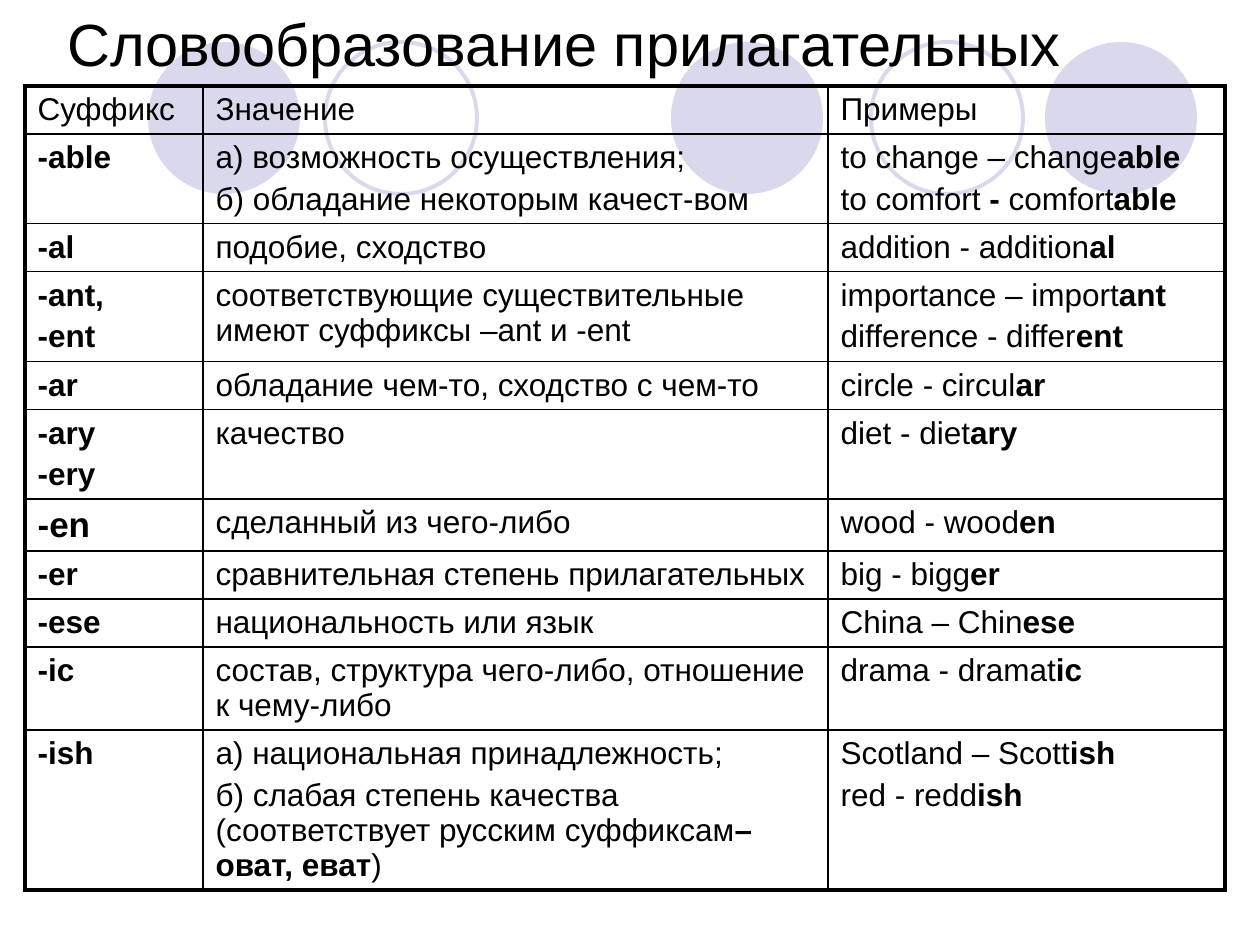
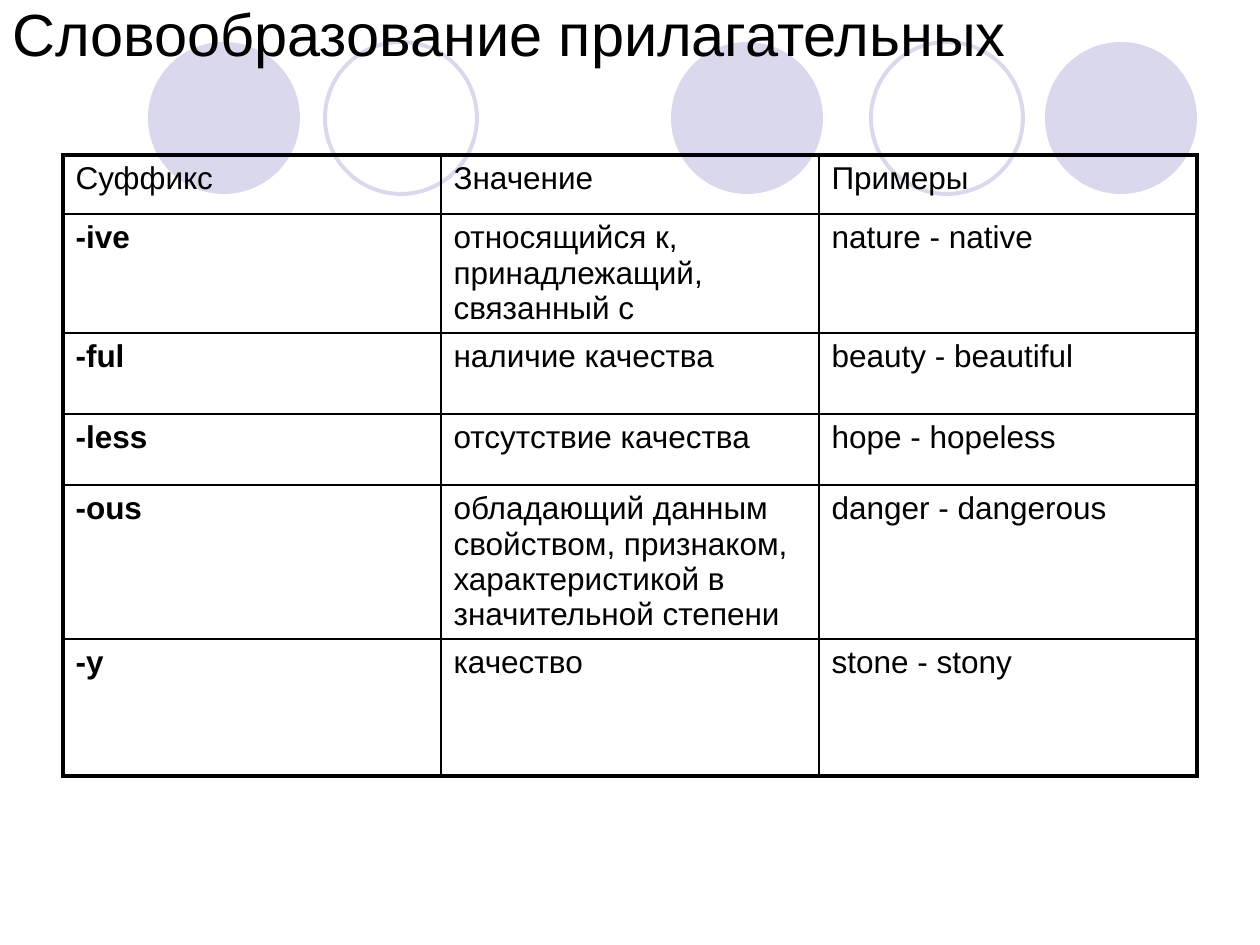
from lxml.etree import SubElement
from pptx import Presentation
from pptx.dml.color import RGBColor
from pptx.enum.shapes import MSO_SHAPE as SHAPE
from pptx.enum.text import MSO_ANCHOR as ANCHOR
from pptx.oxml.ns import qn
from pptx.util import Emu, Pt

COLORS = {"text": "000000", "border": "000000", "circle": "D9D8EC", "page": "FFFFFF"}
FONT = "Arial"
TITLE = "Словообразование прилагательных"
HEADER = ("Суффикс", "Значение", "Примеры")
CIRCLE_SIZE, CIRCLE_TOP = 152, 42
CIRCLES = [(671, True), (1045, True), (148, True), (871, False), (325, False)]  # left, filled
THICK, THIN = Pt(2.25), Pt(1)
LINE_HEIGHT = 1.12  # table line height, in text sizes


def px(length):
    return Emu(round(length * 914400 / 126))


def write_text(frame, text, size=18, space=3.6, line_height=None):
    """Each line is a paragraph; text between asterisks is bold."""
    frame.word_wrap = True
    for index, line in enumerate(text.split("\n")):
        para = frame.add_paragraph() if index else frame.paragraphs[0]
        if line_height:
            para.line_spacing = Pt(size * line_height)
        if index:
            para.space_before = Pt(space)
        for part, words in enumerate(line.split("*")):
            if words:
                span = para.add_run()
                span.text = words
                span.font.name = FONT
                span.font.size = Pt(size)
                span.font.bold = part % 2 == 1
                span.font.color.rgb = RGBColor.from_string(COLORS["text"])


# Content of the two pages
pages = [
    {
        "title": (55, 0, 1134, 86),
        "origin": (25, 86),
        "columns": [178, 625, 397],
        "heights": [48, 89, 48, 90, 48, 89, 52, 48, 48, 83, 160],
        "rows": [
            ("*-able*", "а) возможность осуществления;\nб) обладание некоторым качест-вом",
             "to change – change*able*\nto comfort *- *comfort*able*"),
            ("*-al*", "подобие, сходство", "addition - addition*al*"),
            ("*-ant,*\n*-ent*", "cоответствующие существительные имеют суффиксы –ant и -ent",
             "importance – import*ant*\ndifference - differ*ent*"),
            ("*-ar*", "обладание чем-то, сходство с чем-то", "circle - circul*ar*"),
            ("*-ary*\n*-ery*", "качество", "diet - diet*ary*"),
            ("*-en*", "сделанный из чего-либо", "wood - wood*en*"),
            ("*-er*", "сравнительная степень прилагательных", "big - bigg*er*"),
            ("*-ese*", "национальность или язык", "China – Chin*ese*"),
            ("*-ic*", "состав, структура чего-либо, отношение к чему-либо",
             "drama - dramat*ic*"),
            ("*-ish*", "а) национальная принадлежность;\nб) слабая степень качества "
             "(соответствует русским суффиксам*–оват, еват*)",
             "Scotland – Scott*ish*\nred - redd*ish*"),
        ],
    },
    {
        "title": (0, 0, 1134, 66),
        "origin": (63, 155),
        "columns": [378] * 3,
        "heights": [59, 119, 81, 71, 154, 137],
        "rows": [
            ("*-ive*", "относящийся к, принадлежащий, связанный с", "nature - native"),
            ("*-ful*", "наличие качества", "beauty - beautiful"),
            ("*-less*", "отсутствие качества", "hope - hopeless"),
            ("*-ous*", "обладающий данным свойством, признаком, "
             "характеристикой в значительной степени", "danger - dangerous"),
            ("*-y*", "качество", "stone - stony"),
        ],
    },
]
LARGE_CELLS = {"*-en*": 20}

deck = Presentation()
deck.slide_width, deck.slide_height = px(1260), px(945)

for content in pages:
    page = deck.slides.add_slide(deck.slide_layouts[6])
    page.background.fill.solid()
    page.background.fill.fore_color.rgb = RGBColor.from_string(COLORS["page"])

    # Band of circles
    for left, filled in CIRCLES:
        circle = page.shapes.add_shape(
            SHAPE.OVAL, px(left), px(CIRCLE_TOP), px(CIRCLE_SIZE), px(CIRCLE_SIZE))
        circle.shadow.inherit = False
        painted, empty = (circle.fill, circle.line.fill) if filled else (circle.line.fill, circle.fill)
        painted.solid()
        painted.fore_color.rgb = RGBColor.from_string(COLORS["circle"])
        empty.background()
        if not filled:
            circle.line.width = THICK

    # Title
    box = page.shapes.add_textbox(*map(px, content["title"]))
    box.text_frame.vertical_anchor = ANCHOR.MIDDLE
    write_text(box.text_frame, TITLE, size=34)

    # Table
    rows = [HEADER] + content["rows"]
    columns, heights = content["columns"], content["heights"]
    table = page.shapes.add_table(
        len(rows), len(columns), *map(px, content["origin"]),
        px(sum(columns)), px(sum(heights))).table
    table.first_row = table.horz_banding = False
    for column, width in zip(table.columns, columns):
        column.width = px(width)
    for row, height in zip(table.rows, heights):
        row.height = px(height)

    for r, texts in enumerate(rows):
        for c, text in enumerate(texts):
            cell = table.cell(r, c)
            write_text(cell.text_frame, text, size=LARGE_CELLS.get(text, 18),
                       line_height=LINE_HEIGHT)
            outer_sides = {"lnL": c == 0, "lnR": c == len(columns) - 1,
                           "lnT": r == 0, "lnB": r == len(rows) - 1}
            properties = cell._tc.get_or_add_tcPr()
            for side, outer in outer_sides.items():
                border = SubElement(properties, qn(f"a:{side}"), w=str(THICK if outer else THIN))
                fill = SubElement(border, qn("a:solidFill"))
                SubElement(fill, qn("a:srgbClr"), val=COLORS["border"])
            cell.fill.background()

deck.save("out.pptx")
